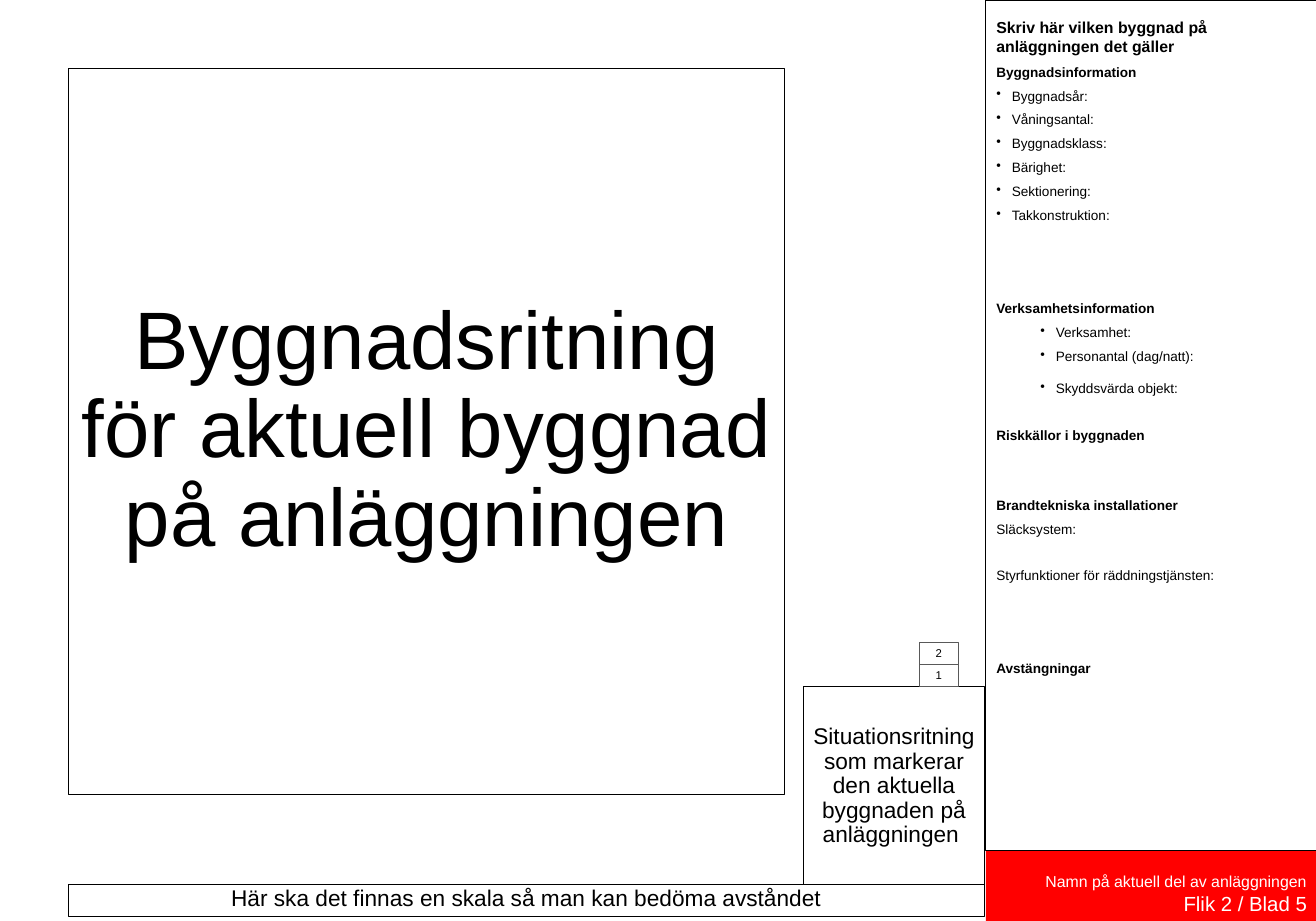
from pptx import Presentation
from pptx.dml.color import RGBColor
from pptx.enum import shapes, text
from pptx.oxml import ns, xmlchemy
from pptx.util import Inches, Pt

FONT = "Arial"
COLORS = {"black": "000000", "white": "FFFFFF", "red": "FF0000", "grey": "595959"}
SPACE = 6.75  # points before each paragraph in the information panel
EMPTY_ROW = 3 * SPACE  # height of one row left free for notes

# Text, kind, free rows above
PANEL = [
    ("Skriv här vilken byggnad på anläggningen det gäller", "title", 0),
    ("Byggnadsinformation", "heading", 0),
    ("Byggnadsår:", "bullet", 0),
    ("Våningsantal:", "bullet", 0),
    ("Byggnadsklass:", "bullet", 0),
    ("Bärighet:", "bullet", 0),
    ("Sektionering:", "bullet", 0),
    ("Takkonstruktion:", "bullet", 0),
    ("Verksamhetsinformation", "heading", 3),
    ("Verksamhet:", "sub-bullet", 0),
    ("Personantal (dag/natt):", "sub-bullet", 0),
    ("Skyddsvärda objekt:", "sub-bullet", 0),
    ("Riskkällor i byggnaden", "heading", 1),
    ("Brandtekniska installationer", "heading", 2),
    ("Släcksystem:", "plain", 0),
    ("Styrfunktioner för räddningstjänsten:", "plain", 1),
    ("Avstängningar", "heading", 3),
]
INDENTS = {"bullet": 0.19, "sub-bullet": 0.73}


def color(name):
    return RGBColor.from_string(COLORS[name])


def style(paragraph, size, font_color="black", bold=False):
    font = paragraph.font
    font.name, font.size, font.bold = FONT, Pt(size), bold
    font.color.rgb = color(font_color)


def add_bullet(paragraph, left):
    properties = paragraph._p.get_or_add_pPr()
    properties.set("marL", str(Inches(left)))
    properties.set("indent", str(Inches(-0.19)))
    bullet = xmlchemy.OxmlElement("a:buChar")
    bullet.set("char", "•")
    properties.append(bullet)


def add_box(slide, left, top, width, height, fill="white", line="black", line_width=1.0):
    shape = slide.shapes.add_shape(
        shapes.MSO_SHAPE.RECTANGLE, Inches(left), Inches(top), Inches(width), Inches(height))
    shape.shadow.inherit = False
    shape.fill.solid()
    shape.fill.fore_color.rgb = color(fill)
    if line:
        shape.line.color.rgb = color(line)
        shape.line.width = Pt(line_width)
    else:
        shape.line.fill.background()
    return shape


def add_label(shape, words, size, line_spacing=1.0):
    frame = shape.text_frame
    frame.word_wrap = True
    frame.vertical_anchor = text.MSO_ANCHOR.MIDDLE
    frame.margin_top = frame.margin_bottom = Inches(0.05)
    paragraph = frame.paragraphs[0]
    paragraph.text = words
    paragraph.alignment = text.PP_ALIGN.CENTER
    paragraph.line_spacing = line_spacing
    style(paragraph, size)


def add_text_frame(slide, top, height):
    box = slide.shapes.add_textbox(Inches(12.11), Inches(top), Inches(4.03), Inches(height))
    frame = box.text_frame
    frame.word_wrap = True
    frame.margin_left = frame.margin_right = Inches(0.11)
    frame.margin_top = frame.margin_bottom = Inches(0.05)
    return frame


def next_paragraph(frame, index):
    return frame.add_paragraph() if index else frame.paragraphs[0]


def add_footer(slide):
    frame = add_text_frame(slide, 10.65, 0.65)
    lines = [("Namn på aktuell del av anläggningen", 14), ("Flik 2 / Blad 5", 18)]
    for index, (words, size) in enumerate(lines):
        paragraph = next_paragraph(frame, index)
        paragraph.text = words
        paragraph.alignment = text.PP_ALIGN.RIGHT
        style(paragraph, size, "white")


def add_information(slide):
    frame = add_text_frame(slide, 0.17, 9.16)
    for index, (words, kind, free_rows) in enumerate(PANEL):
        paragraph = next_paragraph(frame, index)
        paragraph.text = words
        if kind in INDENTS:
            add_bullet(paragraph, INDENTS[kind])
        if kind == "sub-bullet":
            paragraph.level = 1
        if index:
            paragraph.space_before = Pt(SPACE + free_rows * EMPTY_ROW)
        if words == "Skyddsvärda objekt:":
            paragraph.line_spacing = 1.5
        style(paragraph, 14 if kind == "title" else 12, bold=kind in ("title", "heading"))


def main():
    presentation = Presentation()
    presentation.slide_width, presentation.slide_height = Inches(16.14), Inches(11.3)
    slide = presentation.slides.add_slide(presentation.slide_layouts[6])

    # Information panel with red footer
    add_box(slide, 12.09, 10.43, 4.05, 0.87, "red", None)
    add_box(slide, 12.09, 0, 4.05, 10.43, line_width=0.75)
    add_footer(slide)
    add_information(slide)

    # Drawing areas and scale
    drawing = add_box(slide, 0.84, 0.84, 8.78, 8.91)
    add_label(drawing, "Byggnadsritning för aktuell byggnad på anläggningen", 72, 0.9)
    situation = add_box(slide, 9.86, 8.42, 2.21, 2.46)
    add_label(situation,
              "Situationsritning som markerar den aktuella byggnaden på anläggningen ", 20, 0.9)
    scale = add_box(slide, 0.84, 10.85, 11.23, 0.39)
    add_label(scale, "Här ska det finnas en skala så man kan bedöma avståndet", 20, 0.8)

    # Floor numbers, stacked upwards
    for floor in (1, 2):
        box = add_box(slide, 11.28, 8.42 - 0.27 * floor, 0.47, 0.27, "white", "grey", 0.75)
        add_label(box, str(floor), 10)

    presentation.save("out.pptx")


if __name__ == "__main__":
    main()
